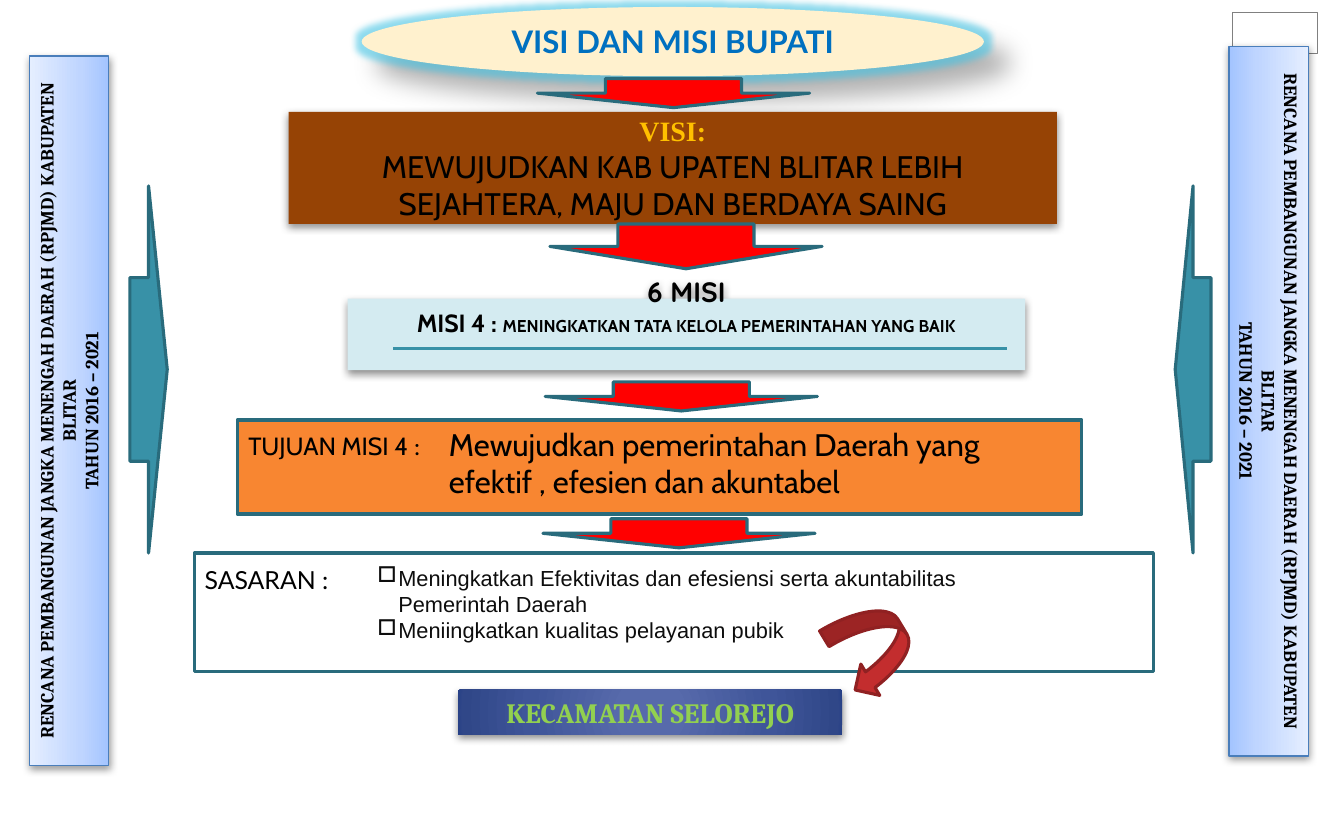
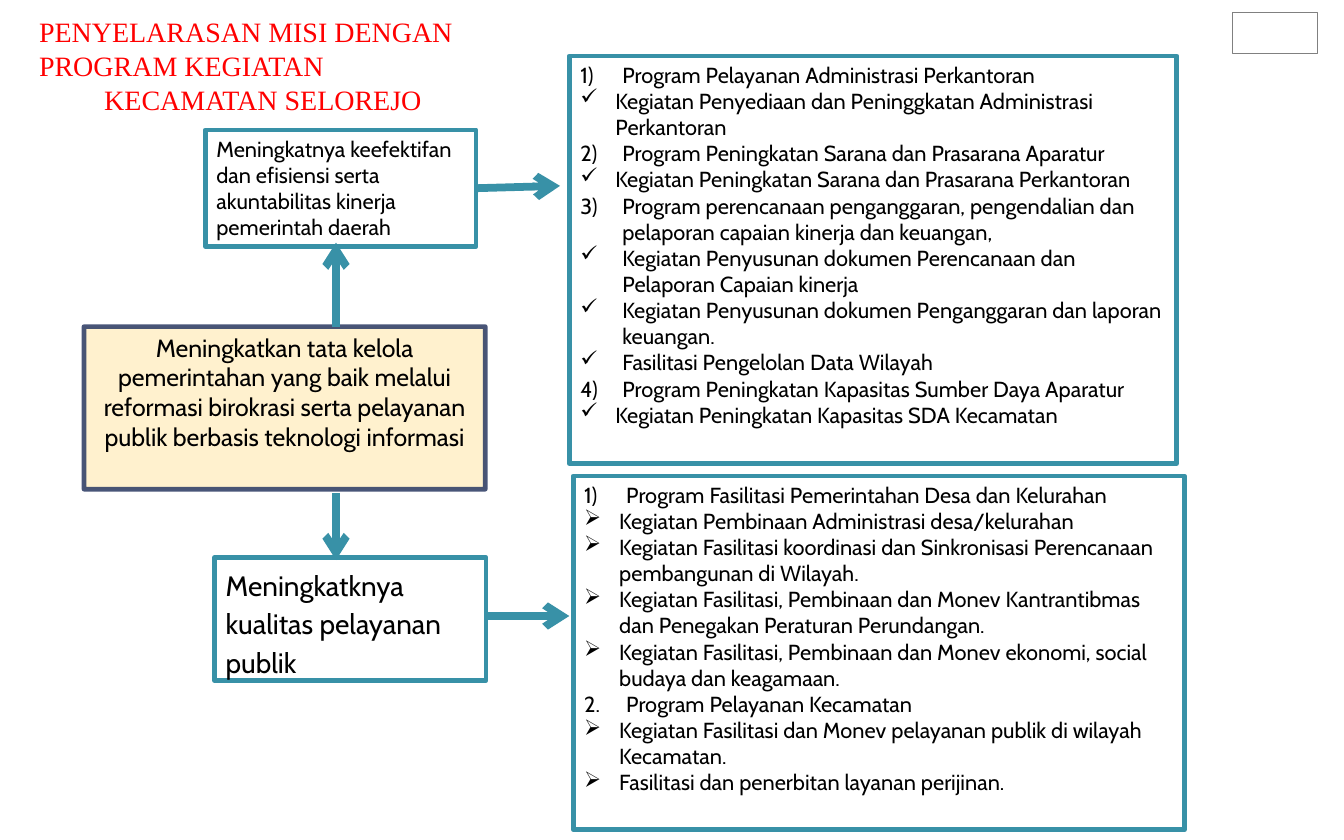
import lxml.etree
import pptx
import pptx.dml.color
import pptx.enum.shapes
import pptx.enum.text
import pptx.oxml.ns
import pptx.util

Pt = pptx.util.Pt
RGB = pptx.dml.color.RGBColor
SHAPE = pptx.enum.shapes.MSO_SHAPE
ANCHOR = pptx.enum.text.MSO_ANCHOR
CENTER = pptx.enum.text.PP_ALIGN.CENTER
qn = pptx.oxml.ns.qn

BLACK = RGB(0x00, 0x00, 0x00)
INK = RGB(0x0D, 0x0D, 0x0D)
GREY = RGB(0x80, 0x80, 0x80)
RED = RGB(0xFF, 0x00, 0x00)
TEAL = RGB(0x38, 0x91, 0xA7)
DARK_TEAL = RGB(0x29, 0x6B, 0x7C)
PALE_TEAL = RGB(0xD4, 0xEB, 0xF1)
CREAM = RGB(0xFF, 0xF1, 0xCE)
BROWN = RGB(0x96, 0x43, 0x05)
ORANGE = RGB(0xF8, 0x86, 0x31)
GOLD = RGB(0xFF, 0xC0, 0x00)
BLUE = RGB(0x00, 0x70, 0xC0)
RAIL_BLUE = RGB(0x4A, 0x7E, 0xBB)
NAVY = RGB(0x35, 0x43, 0x6A)
GREEN = RGB(0x92, 0xD0, 0x50)
CRIMSON = RGB(0xC3, 0x2D, 0x2E)
DARK_CRIMSON = RGB(0x90, 0x21, 0x22)
GLOW_BLUE = RGB(0x45, 0xC4, 0xE4)

RAIL_STOPS = [(0, RGB(0xA3, 0xC4, 0xFF)), (35, RGB(0xBF, 0xD5, 0xFF)),
              (100, RGB(0xE5, 0xEE, 0xFF))]
DISTRICT_STOPS = [(0, RGB(0x57, 0x6B, 0xAC)), (15, RGB(0x57, 0x6A, 0xAB)),
                  (62, RGB(0x3F, 0x55, 0x99)), (97, RGB(0x30, 0x47, 0x88)),
                  (100, RGB(0x26, 0x40, 0x86))]
# Shadow: opacity in percent, blur, distance, angle
SOFT = (43, 5, 2, 90)
RAIL_SHADOW = (38, 5, 1.6, 90)
TITLE_SHADOW = (30, 15, 18, 45)


def child(parent, tag, **attributes):
    return lxml.etree.SubElement(
        parent, qn(tag), {name: str(value) for name, value in attributes.items()})


def colour_in(parent, colour, opacity=100):
    node = child(parent, "a:srgbClr", val=colour)
    if opacity < 100:
        child(node, "a:alpha", val=opacity * 1000)


def set_bullet(paragraph, bullet, indent):
    """A bullet is a character, or a pair of numbering scheme and first number."""
    props = paragraph._p.get_or_add_pPr()
    props.set("marL", str(Pt(indent)))
    props.set("indent", str(-Pt(indent)))
    if isinstance(bullet, tuple):
        child(props, "a:buAutoNum", type=bullet[0], startAt=bullet[1])
    else:
        child(props, "a:buChar", char=bullet)


def write(shape, text, font="Cabin", size=14, colour=BLACK, bold=False, align=None,
          bullet=None, indent=0, spacing=None, same_line=False):
    """Adds a paragraph to the shape, or a run to its last paragraph."""
    frame = shape.text_frame
    paragraph = frame.paragraphs[-1]
    if paragraph.runs and not same_line:
        paragraph = frame.add_paragraph()
    if not same_line:
        paragraph.alignment = align or pptx.enum.text.PP_ALIGN.LEFT
        if spacing:
            paragraph.line_spacing = spacing
        if bullet:
            set_bullet(paragraph, bullet, indent)
    run = paragraph.add_run()
    run.text = text
    run.font.name, run.font.size, run.font.bold = font, Pt(size), bold
    run.font.color.rgb = colour


class Deck:
    def __init__(self):
        self.prs = pptx.Presentation()
        self.prs.slide_width, self.prs.slide_height = Pt(864), Pt(540)
        self.slide = None

    def new_slide(self):
        self.slide = self.prs.slides.add_slide(self.prs.slide_layouts[6])
        # Number frame in the corner of every slide
        self.shape(792, 8, 54.7, 26, line=GREY, weight=0.25)

    def frame(self, shape, anchor, insets):
        text_frame = shape.text_frame
        text_frame.word_wrap = True
        text_frame.vertical_anchor = anchor
        (text_frame.margin_left, text_frame.margin_top,
         text_frame.margin_right, text_frame.margin_bottom) = map(Pt, insets)
        return shape

    def shape(self, left, top, width, height, kind=SHAPE.RECTANGLE, fill=None, line=None,
              weight=2, opacity=100, rotation=0, shadow=None, glow=None,
              anchor=ANCHOR.TOP, insets=(7.2, 3.6, 7.2, 3.6)):
        shape = self.slide.shapes.add_shape(kind, Pt(left), Pt(top), Pt(width), Pt(height))
        shape.rotation = rotation
        if fill:
            shape.fill.solid()
            shape.fill.fore_color.rgb = fill
        else:
            shape.fill.background()
        if line:
            shape.line.color.rgb = line
            shape.line.width = Pt(weight)
            if opacity < 100:
                solid = shape.line._ln.find(qn("a:solidFill"))
                child(solid[0], "a:alpha", val=opacity * 1000)
        else:
            shape.line.fill.background()
        self.effects(shape, shadow, glow)
        return self.frame(shape, anchor, insets)

    def effects(self, shape, shadow, glow):
        shape.shadow.inherit = False
        effects = shape._element.spPr.find(qn("a:effectLst"))
        if glow:
            colour_in(child(effects, "a:glow", rad=Pt(8)), glow, 60)
        if shadow:
            opacity, blur, distance, angle = shadow
            node = child(effects, "a:outerShdw", blurRad=Pt(blur), dist=Pt(distance),
                         dir=angle * 60000, algn="ctr", rotWithShape=0)
            colour_in(node, BLACK, opacity)

    def gradient(self, shape, stops, angle=None):
        """Linear at the given angle, or circular from the centre."""
        shape.fill.gradient()
        fill = shape._element.spPr.find(qn("a:gradFill"))
        fill.clear()
        fill.set("rotWithShape", "1")
        stop_list = child(fill, "a:gsLst")
        for position, colour in stops:
            colour_in(child(stop_list, "a:gs", pos=position * 1000), colour)
        if angle is None:
            centre = child(fill, "a:path", path="circle")
            child(centre, "a:fillToRect", l=50000, t=50000, r=50000, b=50000)
        else:
            child(fill, "a:lin", ang=angle * 60000, scaled=0)

    def text_box(self, left, top, width, height, insets=(7.2, 3.6, 7.2, 3.6)):
        box = self.slide.shapes.add_textbox(Pt(left), Pt(top), Pt(width), Pt(height))
        return self.frame(box, ANCHOR.TOP, insets)

    def line(self, start, end, weight=5, arrow=True):
        connector = self.slide.shapes.add_connector(
            pptx.enum.shapes.MSO_CONNECTOR.STRAIGHT, *map(Pt, start + end))
        connector.line.color.rgb = TEAL
        connector.line.width = Pt(weight)
        if arrow:
            child(connector.line._ln, "a:tailEnd", type="arrow")
        child(connector._element.spPr, "a:effectLst")

    def down_arrow(self, left, top, height=18.7):
        self.shape(left, top, 175, height, SHAPE.DOWN_ARROW, RED, DARK_TEAL)

    def rail(self, left, top, rotation):
        rail = self.shape(left, top, 456, 51, line=RAIL_BLUE, weight=0.75,
                          rotation=rotation, shadow=RAIL_SHADOW)
        self.gradient(rail, RAIL_STOPS, 270)
        for text in ("RENCANA PEMBANGUNAN JANGKA MENENGAH DAERAH (RPJMD) KABUPATEN BLITAR",
                     "TAHUN 2016 – 2021"):
            write(rail, text, font="Cambria", size=12, bold=True, align=CENTER)

    def programmes(self, left, top, width, height, items):
        box = self.shape(left, top, width, height, line=TEAL, weight=3)
        for bullet, indent, text in items:
            write(box, text, bullet=bullet, indent=indent)


def vision_slide(deck):
    deck.new_slide()
    deck.shape(755.5, 119.5, 23, 236, SHAPE.LEFT_ARROW, TEAL, DARK_TEAL)

    # Title
    title = deck.shape(232.5, 4.5, 400, 44.5, SHAPE.OVAL, CREAM,
                       shadow=TITLE_SHADOW, glow=GLOW_BLUE)
    write(title, "VISI DAN MISI BUPATI", font="Lato", size=20, colour=BLUE, bold=True,
          align=CENTER)

    # Mission and vision
    mission = deck.shape(223.5, 192, 435.5, 46, fill=PALE_TEAL, shadow=SOFT,
                         anchor=ANCHOR.BOTTOM, insets=(7.2, 0, 7.2, 21))
    write(mission, "6 MISI", font="Quicksand", size=18, bold=True, align=CENTER)
    write(mission, "MISI 4 : ", size=16, bold=True, align=CENTER)
    write(mission, "MENINGKATKAN TATA KELOLA PEMERINTAHAN YANG BAIK", size=11, bold=True,
          same_line=True)
    vision = deck.shape(185.5, 72, 494, 72, fill=BROWN, shadow=SOFT, anchor=ANCHOR.MIDDLE,
                        insets=(30, 3.6, 30, 3.6))
    write(vision, "VISI:", font="Times New Roman", size=18, colour=GOLD, bold=True,
          align=CENTER)
    write(vision, "MEWUJUDKAN KAB UPATEN BLITAR LEBIH SEJAHTERA, MAJU DAN BERDAYA SAING",
          size=20, align=CENTER)
    deck.down_arrow(345.5, 50.5)
    deck.down_arrow(353.5, 144, 28.8)

    # Frames for goal and targets
    deck.shape(152.5, 270, 543, 60.5, fill=ORANGE, line=DARK_TEAL)
    deck.shape(125, 355.5, 616.5, 76, line=DARK_TEAL)

    # Side rails
    deck.rail(-183.6, 238.5, 270)
    deck.rail(587.5, 232.5, 90)
    deck.shape(83.5, 119.5, 24, 236, SHAPE.RIGHT_ARROW, TEAL, DARK_TEAL)

    # District
    district = deck.shape(294.5, 443.5, 247, 29, shadow=SOFT, anchor=ANCHOR.MIDDLE)
    deck.gradient(district, DISTRICT_STOPS)
    write(district, "KECAMATAN SELOREJO", font="Cambria", size=18, colour=GREEN,
          bold=True, align=CENTER)
    deck.line((252.7, 224), (647.3, 224), weight=2.25, arrow=False)

    # Goal and target texts
    goal_label = deck.text_box(152.5, 273.5, 142, 26.5)
    write(goal_label, "TUJUAN MISI 4 ", size=16)
    write(goal_label, ":", font="Calibri", size=16, same_line=True)
    goal = deck.text_box(281.5, 270, 408, 55.5, insets=(7.2, 3.6, 25, 3.6))
    write(goal, "Mewujudkan pemerintahan Daerah yang efektif , efesien dan akuntabel", size=20)
    target_label = deck.text_box(124.5, 359.5, 121.5, 26.5)
    write(target_label, "SASARAN :", font="Lato", size=16)
    deck.shape(538, 389.5, 47, 56, SHAPE.CURVED_LEFT_ARROW, CRIMSON, DARK_CRIMSON,
               rotation=328.9)
    deck.down_arrow(350.5, 245.5)
    deck.down_arrow(349, 333.5)
    targets = deck.text_box(235.5, 359.5, 443, 55.5, insets=(7.2, 3.6, 40, 3.6))
    for text in ("Meningkatkan Efektivitas dan efesiensi serta akuntabilitas Pemerintah Daerah",
                 "Meniingkatkan kualitas pelayanan pubik"):
        write(targets, text, font="Arial", colour=INK, bullet="□", indent=13.5)


def alignment_slide(deck):
    deck.new_slide()

    # Mission and its two targets
    mission = deck.shape(54, 210, 258, 104.5, fill=CREAM, line=NAVY, weight=3, opacity=89)
    write(mission, "Meningkatkan tata kelola pemerintahan yang baik melalui reformasi birokrasi "
          "serta pelayanan publik berbasis teknologi informasi", size=16, align=CENTER)
    effectiveness = deck.shape(132, 83.5, 174, 75, line=TEAL, weight=3)
    write(effectiveness, "Meningkatnya keefektifan dan efisiensi serta akuntabilitas kinerja "
          "pemerintah daerah")
    service = deck.shape(138, 358.5, 174.5, 79, line=TEAL, weight=3)
    write(service, "Meningkatknya kualitas pelayanan publik", size=18, spacing=1.15)
    for start, end in (((216, 210), (216, 156)), ((216, 317), (216, 360)),
                       ((306, 121), (360, 119.5)), ((312, 396), (366, 396))):
        deck.line(start, end)

    # Programmes: bullet, indent, text
    numbered, dotted, tick, arrow = "arabicParenR", "arabicPeriod", "✓", "➢"
    wide, narrow = 27, 22.5
    deck.programmes(366, 36, 390.5, 262, [
        ((numbered, 1), wide, "Program Pelayanan Administrasi Perkantoran"),
        (tick, narrow, "Kegiatan Penyediaan dan Peninggkatan Administrasi Perkantoran"),
        ((numbered, 2), wide, "Program Peningkatan Sarana dan Prasarana Aparatur"),
        (tick, narrow, "Kegiatan Peningkatan Sarana dan Prasarana Perkantoran"),
        ((numbered, 3), wide, "Program perencanaan penganggaran, pengendalian dan pelaporan "
                              "capaian kinerja dan keuangan,"),
        (tick, wide, "Kegiatan Penyusunan dokumen Perencanaan dan Pelaporan Capaian kinerja"),
        (tick, wide, "Kegiatan Penyusunan dokumen Penganggaran dan laporan keuangan."),
        (tick, wide, "Fasilitasi Pengelolan Data Wilayah"),
        ((numbered, 4), wide, "Program Peningkatan Kapasitas Sumber Daya Aparatur"),
        (tick, narrow, "Kegiatan Peningkatan Kapasitas SDA Kecamatan")])
    deck.programmes(368.5, 306, 393, 227.5, [
        ((numbered, 1), wide, "Program Fasilitasi Pemerintahan Desa dan Kelurahan"),
        (arrow, narrow, "Kegiatan Pembinaan Administrasi desa/kelurahan"),
        (arrow, narrow, "Kegiatan Fasilitasi koordinasi dan Sinkronisasi Perencanaan "
                        "pembangunan di Wilayah."),
        (arrow, narrow, "Kegiatan Fasilitasi, Pembinaan dan Monev Kantrantibmas dan "
                        "Penegakan Peraturan Perundangan."),
        (arrow, narrow, "Kegiatan Fasilitasi, Pembinaan dan Monev ekonomi, social budaya "
                        "dan keagamaan."),
        ((dotted, 2), wide, "Program Pelayanan Kecamatan"),
        (arrow, narrow, "Kegiatan Fasilitasi dan Monev pelayanan publik di wilayah Kecamatan."),
        (arrow, narrow, "Fasilitasi dan penerbitan layanan perijinan.")])

    # Title
    title = deck.text_box(18, 6, 337, 51, insets=(7.2, 3.6, 42, 3.6))
    for text, align in (("PENYELARASAN MISI DENGAN PROGRAM KEGIATAN", None),
                        ("KECAMATAN SELOREJO", CENTER)):
        write(title, text, font="Times New Roman", size=18, colour=RED, align=align)


def main():
    deck = Deck()
    vision_slide(deck)
    alignment_slide(deck)
    deck.prs.save("out.pptx")


if __name__ == "__main__":
    main()
